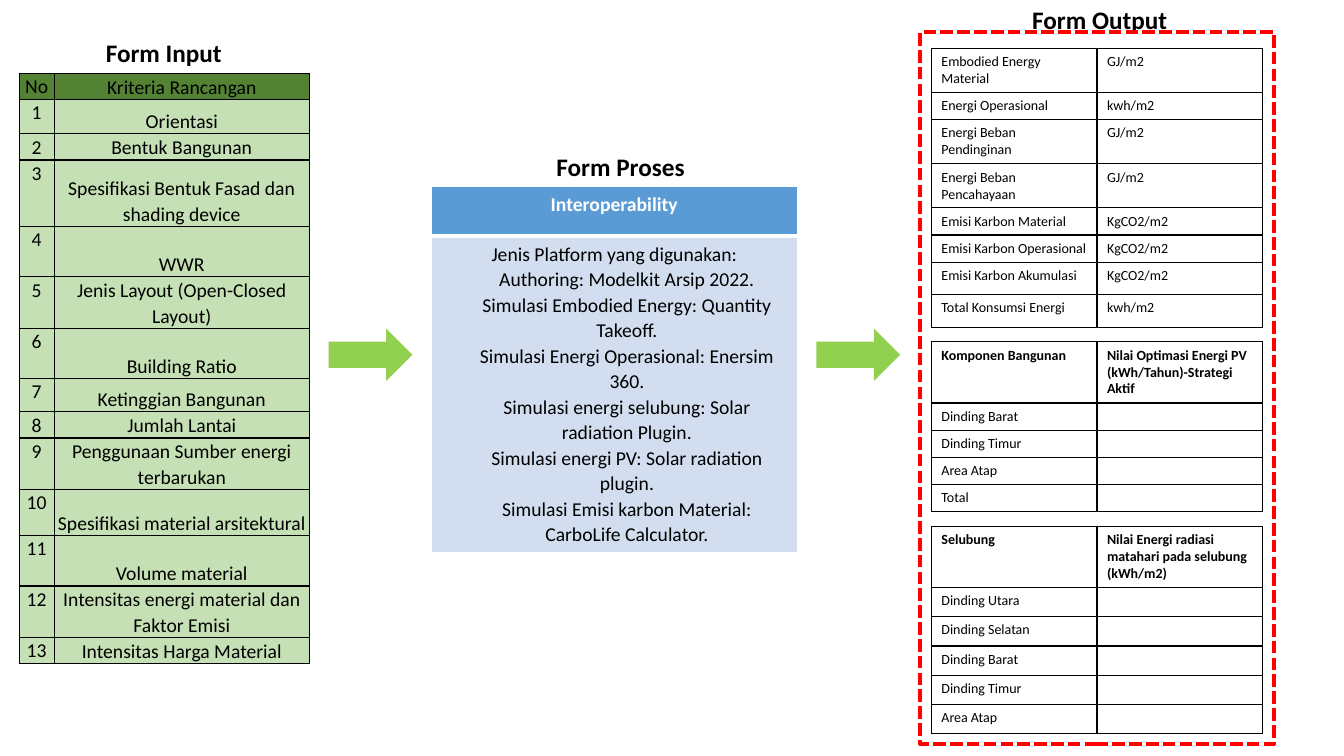
"""Build the slide of input, process and output forms."""
from dataclasses import dataclass, field
from typing import Any

from lxml.etree import SubElement
from pptx import Presentation
from pptx.dml.color import RGBColor
from pptx.enum.dml import MSO_LINE
from pptx.enum.shapes import MSO_SHAPE
from pptx.enum.text import MSO_ANCHOR, MSO_AUTO_SIZE, PP_ALIGN
from pptx.oxml.ns import qn
from pptx.util import Emu, Inches, Pt

WIDE, HIGH = Inches(13.333), Inches(7.5)


@dataclass(frozen=True)
class Theme:
    font: str = "Calibri"
    black: str = "000000"
    white: str = "FFFFFF"
    moss: str = "548235"
    mint: str = "C5E0B4"
    blue: str = "5B9BD5"
    pale: str = "D2DEEF"
    red: str = "FF0000"
    lime: str = "92D050"
    head: int = 18
    body: int = 14
    small: int = 10


@dataclass(frozen=True)
class Box:
    x: float
    y: float
    w: float
    h: float


@dataclass(frozen=True)
class Look:
    size: int
    edge: str
    fills: tuple[str, str] | None = None
    inks: tuple[str, str] = ("000000", "000000")
    bold: bool = False
    inner: int = 1
    space: float = 1.0
    align: Any = PP_ALIGN.LEFT
    pads: dict = field(default_factory=dict)
    last: Any = MSO_ANCHOR.TOP


@dataclass(frozen=True)
class Form:
    x: float
    y: float
    cols: list[float]
    rows: list[float]
    cells: list[tuple[str, ...]]
    look: Look


T = Theme()
FLUSH = dict.fromkeys(
    ("margin_left", "margin_right", "margin_top", "margin_bottom"), 0)
INPUT = Look(T.body, T.black, (T.moss, T.mint), space=1.07,
             align=PP_ALIGN.CENTER, pads=FLUSH, last=MSO_ANCHOR.BOTTOM)
STEPS = Look(T.body, T.white, (T.blue, T.pale), (T.white, T.black), True,
             inner=3, space=1.07, align=PP_ALIGN.CENTER)
UNITS = Look(T.small, T.black)
SUMS = Look(T.small, T.black, bold=True)

KINDS = ["Orientasi", "Bentuk Bangunan",
         "Spesifikasi Bentuk Fasad dan shading device", "WWR",
         "Jenis Layout (Open-Closed Layout)", "Building Ratio",
         "Ketinggian Bangunan", "Jumlah Lantai",
         "Penggunaan Sumber energi terbarukan",
         "Spesifikasi material arsitektural", "Volume material",
         "Intensitas energi material dan Faktor Emisi",
         "Intensitas Harga Material"]
TOOLS = ["Jenis Platform yang digunakan:",
         "Authoring: Modelkit Arsip 2022.",
         "Simulasi Embodied Energy: Quantity Takeoff.",
         "Simulasi Energi Operasional: Enersim 360.",
         "Simulasi energi selubung: Solar radiation Plugin.",
         "Simulasi energi PV: Solar radiation plugin.",
         "Simulasi Emisi karbon Material: CarboLife Calculator."]
RESULTS = [("Embodied Energy Material", "GJ/m2"),
           ("Energi Operasional", "kwh/m2"),
           ("Energi Beban Pendinginan", "GJ/m2"),
           ("Energi Beban Pencahayaan", "GJ/m2"),
           ("Emisi Karbon Material", "KgCO2/m2"),
           ("Emisi Karbon Operasional", "KgCO2/m2"),
           ("Emisi Karbon Akumulasi", "KgCO2/m2"),
           ("Total Konsumsi Energi", "kwh/m2")]
SOLAR = [("Komponen Bangunan",
          "Nilai Optimasi Energi PV (kWh/Tahun)-Strategi Aktif"),
         *((part, "") for part in
           ("Dinding Barat", "Dinding Timur", "Area Atap", "Total"))]
SHELL = [("Selubung", "Nilai Energi radiasi matahari pada selubung (kWh/m2)"),
         *((part, "") for part in
           ("Dinding Utara", "Dinding Selatan", "Dinding Barat",
            "Dinding Timur", "Area Atap"))]

HALVES = [12.32, 12.32]
FORMS = [
    Form(1.43, 9.73, [2.6, 19.0],
         [3.45, 4.53, 3.45, 8.8, 6.67, 6.8, 6.67, 4.4, 3.45, 6.8, 6.13,
          6.67, 6.8, 3.45],
         [("No", "Kriteria Rancangan"),
          *((str(n), kind) for n, kind in enumerate(KINDS, 1))], INPUT),
    Form(32.1, 24.67, [27.22], [6.53, 41.33],
         [("Interoperability",), ("\n".join(TOOLS),)], STEPS),
    Form(69.3, 6.4, HALVES, [5.8, 3.6, 5.8, 5.8, 3.6, 3.6, 4.3, 4.3],
         RESULTS, UNITS),
    Form(69.3, 45.2, HALVES, [8.1] + [3.6] * 4, SOLAR, SUMS),
    Form(69.3, 69.6, HALVES, [8.1] + [3.87] * 5, SHELL, SUMS),
]
HEADS = {1: ("Form Input", Box(7.12, 4.27, 10.2, 5.33)),
         0: ("Form Proses", Box(40.65, 19.33, 11.1, 5.33)),
         3: ("Form Output", Box(76.05, -0.13, 11.63, 5.33))}
FRAME = Box(68.48, 4.27, 26.33, 94.13)
ARROWS = [Box(x, 43.47, 6.23, 6.93) for x in (24.45, 60.75)]


def across(share: float) -> Emu:
    return Emu(round(WIDE * share / 100))


def down(share: float) -> Emu:
    return Emu(round(HIGH * share / 100))


def spot(box: Box) -> tuple[Emu, Emu, Emu, Emu]:
    return across(box.x), down(box.y), across(box.w), down(box.h)


def apply(item: Any, values: dict) -> None:
    for name, value in values.items():
        setattr(item, name, value)


def style(para: Any, size: int, ink: str, bold: bool) -> None:
    for run in para.runs:
        apply(run.font, {"name": T.font, "size": Pt(size), "bold": bold})
        run.font.color.rgb = RGBColor.from_string(ink)
    if not para.runs:
        SubElement(para._p, qn("a:endParaRPr"), sz=str(size * 100))


def border(cell: Any, look: Look, first: bool, final: bool) -> None:
    wide = {"L": 1, "R": 1, "T": 1 if first else look.inner,
            "B": 1 if final else look.inner}
    props = cell._tc.get_or_add_tcPr()
    for side, width in wide.items():
        line = SubElement(props, qn(f"a:ln{side}"), w=str(Pt(width)))
        fill = SubElement(line, qn("a:solidFill"))
        SubElement(fill, qn("a:srgbClr"), val=look.edge)


def write(cell: Any, text: str, look: Look, row: int) -> None:
    cell.text = text
    part = min(row, 1)
    for n, para in enumerate(cell.text_frame.paragraphs):
        apply(para, {"alignment": look.align, "line_spacing": look.space})
        if n:
            apply_indent = para._p.get_or_add_pPr()
            apply_indent.set("marL", str(Inches(0.25)))
        style(para, look.size, look.inks[part], look.bold and not row)


def draw(slide: Any, form: Form) -> None:
    box = Box(form.x, form.y, sum(form.cols), sum(form.rows))
    table = slide.shapes.add_table(
        len(form.rows), len(form.cols), *spot(box)).table
    table.horz_banding = False
    for col, share in zip(table.columns, form.cols):
        col.width = across(share)
    for r, (row, share) in enumerate(zip(table.rows, form.rows)):
        row.height = down(share)
        for c, (cell, text) in enumerate(zip(row.cells, form.cells[r])):
            write(cell, text, form.look, r)
            anchor = form.look.last if c else MSO_ANCHOR.TOP
            apply(cell, {**form.look.pads, "vertical_anchor": anchor})
            border(cell, form.look, r == 0, r == len(form.rows) - 1)
            if form.look.fills:
                cell.fill.solid()
                tint = form.look.fills[min(r, 1)]
                cell.fill.fore_color.rgb = RGBColor.from_string(tint)
            else:
                cell.fill.background()


def label(slide: Any) -> None:
    for holder in list(slide.placeholders):
        key = holder.placeholder_format.idx
        if key not in HEADS:
            holder.element.getparent().remove(holder.element)
            continue
        text, box = HEADS[key]
        apply(holder, dict(zip(("left", "top", "width", "height"), spot(box))))
        frame = holder.text_frame
        frame.text = text
        apply(frame, {"word_wrap": False, "auto_size": MSO_AUTO_SIZE.NONE,
                      "vertical_anchor": MSO_ANCHOR.TOP})
        para = frame.paragraphs[0]
        apply(para, {"alignment": PP_ALIGN.LEFT, "space_before": Pt(0)})
        style(para, T.head, T.black, True)


def mark(slide: Any) -> None:
    frame = slide.shapes.add_shape(MSO_SHAPE.RECTANGLE, *spot(FRAME))
    frame.shadow.inherit = False
    frame.fill.background()
    frame.line.color.rgb = RGBColor.from_string(T.red)
    apply(frame.line, {"width": Pt(3), "dash_style": MSO_LINE.SQUARE_DOT})
    for box in ARROWS:
        arrow = slide.shapes.add_shape(MSO_SHAPE.RIGHT_ARROW, *spot(box))
        arrow.shadow.inherit = False
        arrow.fill.solid()
        arrow.fill.fore_color.rgb = RGBColor.from_string(T.lime)
        arrow.line.fill.background()


def main() -> None:
    deck = Presentation()
    apply(deck, {"slide_width": WIDE, "slide_height": HIGH})
    slide = deck.slides.add_slide(deck.slide_layouts[4])
    label(slide)
    for form in FORMS:
        draw(slide, form)
    mark(slide)
    deck.save("out.pptx")


if __name__ == "__main__":
    main()
